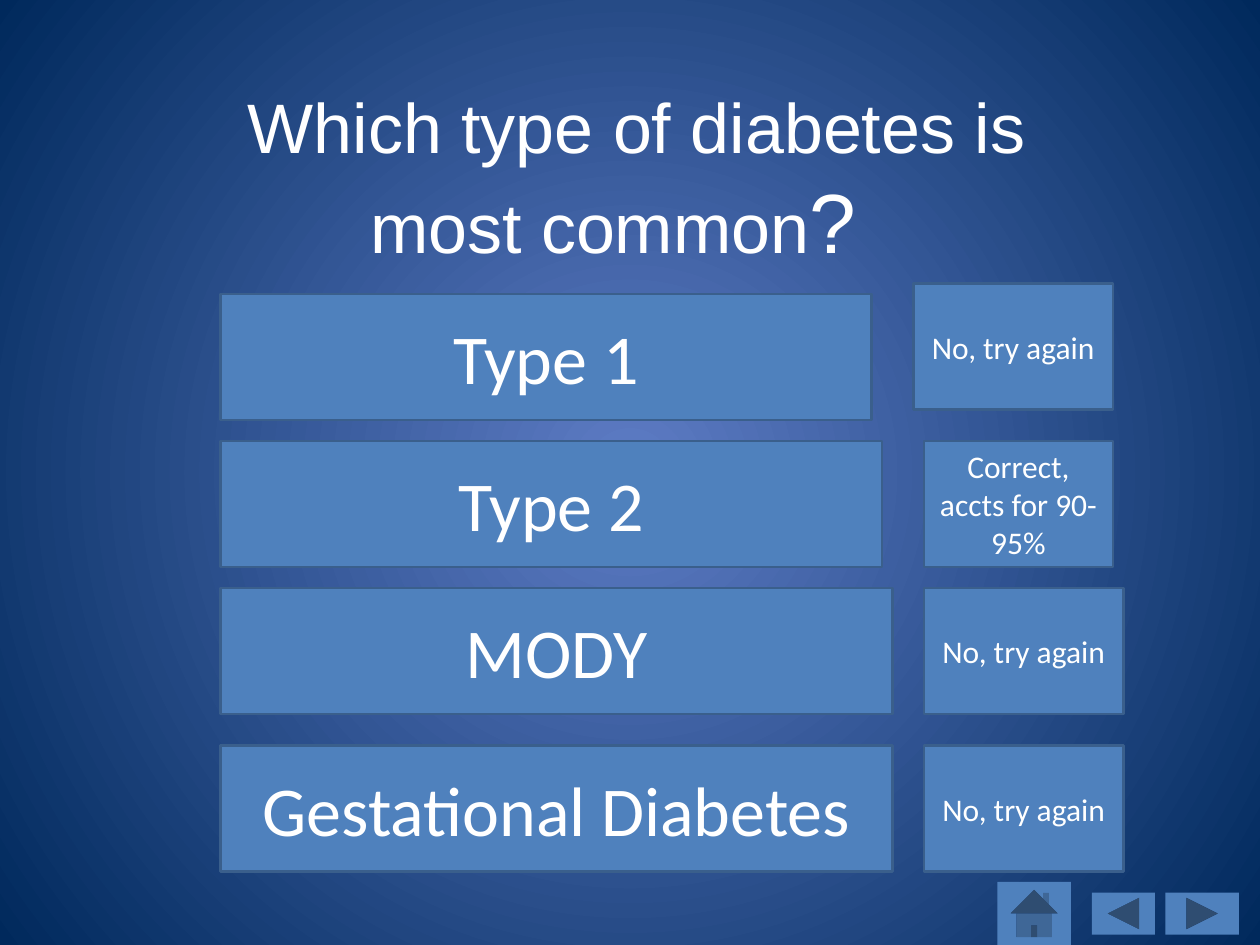
from dataclasses import dataclass

from lxml import etree
from pptx import Presentation
from pptx.dml.color import RGBColor
from pptx.enum.shapes import MSO_SHAPE
from pptx.enum.text import MSO_ANCHOR, PP_ALIGN
from pptx.oxml.ns import qn
from pptx.util import Inches, Pt

RECTANGLE = MSO_SHAPE.RECTANGLE
BACK = MSO_SHAPE.ACTION_BUTTON_BACK_OR_PREVIOUS
FORWARD = MSO_SHAPE.ACTION_BUTTON_FORWARD_OR_NEXT
HOME = MSO_SHAPE.ACTION_BUTTON_HOME
CENTER = PP_ALIGN.CENTER
MIDDLE = MSO_ANCHOR.MIDDLE

COLUMNS, ROWS = 120, 90


@dataclass(frozen=True)
class Theme:
    glow: RGBColor = RGBColor.from_string("5E7CC5")
    edge: RGBColor = RGBColor.from_string("00295C")
    panel: RGBColor = RGBColor.from_string("4F81BD")
    outline: RGBColor = RGBColor.from_string("3A5F8C")
    text: RGBColor = RGBColor.from_string("FFFFFF")
    title_font: str = "Arial"
    body_font: str = "Calibri"
    mark_size: int = 48
    title_size: int = 40
    answer_size: int = 40
    reply_size: int = 18
    outline_width: float = 1.5


class QuizSlide:
    def __init__(self, deck, theme):
        self.theme = theme
        self.page = deck.slides.add_slide(deck.slide_layouts[6])
        self.column = deck.slide_width / COLUMNS
        self.row = deck.slide_height / ROWS

    def place(self, left, top, width, height):
        return (round(left * self.column), round(top * self.row),
                round(width * self.column), round(height * self.row))

    def style(self, span, font, size):
        span.font.name = font
        span.font.size = Pt(size)
        span.font.color.rgb = self.theme.text

    def background(self):
        fill = self.page.background.fill
        fill.gradient()
        for stop, color in zip(fill.gradient_stops, (self.theme.glow, self.theme.edge)):
            stop.color.rgb = color
        gradient = self.page.element.find(".//" + qn("a:gradFill"))
        gradient.remove(gradient.find(qn("a:lin")))
        circle = etree.SubElement(gradient, qn("a:path"), {"path": "circle"})
        center = dict.fromkeys("ltrb", "50000")
        etree.SubElement(circle, qn("a:fillToRect"), center)

    def title(self, area, pieces):
        box = self.page.shapes.add_textbox(*self.place(*area))
        box.text_frame.word_wrap = True
        para = box.text_frame.paragraphs[0]
        para.alignment = CENTER
        for text, size in pieces:
            span = para.add_run()
            span.text = text
            self.style(span, self.theme.title_font, size)

    def shape(self, kind, area):
        shape = self.page.shapes.add_shape(kind, *self.place(*area))
        shape.shadow.inherit = False
        shape.fill.solid()
        shape.fill.fore_color.rgb = self.theme.panel
        return shape

    def button(self, kind, area):
        self.shape(kind, area).line.fill.background()

    def panel(self, area, text, size):
        panel = self.shape(RECTANGLE, area)
        panel.line.color.rgb = self.theme.outline
        panel.line.width = Pt(self.theme.outline_width)
        frame = panel.text_frame
        frame.text = text
        frame.word_wrap = True
        frame.vertical_anchor = MIDDLE
        para = frame.paragraphs[0]
        para.alignment = CENTER
        self.style(para.runs[0], self.theme.body_font, size)


def main():
    deck = Presentation()
    deck.slide_width, deck.slide_height = Inches(10), Inches(7.5)
    theme = Theme()
    quiz = QuizSlide(deck, theme)
    quiz.background()

    quiz.button(BACK, (104, 85, 6, 4))
    quiz.button(FORWARD, (111, 85, 7, 4))
    quiz.button(HOME, (95, 84, 7, 6))

    quiz.title((15, 6, 89, 20.6), (
        (" ", theme.mark_size),
        ("Which type of diabetes is most common", theme.title_size),
        ("? ", theme.mark_size),
    ))

    wrong = "No, try again"
    choices = (
        ("Type 1", 28, 62, wrong, 87, 27, 19),
        ("Type 2", 42, 63, "Correct, accts for 90-95%", 88, 42, 18),
        ("MODY", 56, 64, wrong, 88, 56, 19),
        ("Gestational Diabetes", 71, 64, wrong, 88, 71, 19),
    )
    for answer, top, width, reply, reply_left, reply_top, reply_width in choices:
        quiz.panel((21, top, width, 12), answer, theme.answer_size)
        quiz.panel((reply_left, reply_top, reply_width, 12), reply, theme.reply_size)

    deck.save("out.pptx")


if __name__ == "__main__":
    main()
